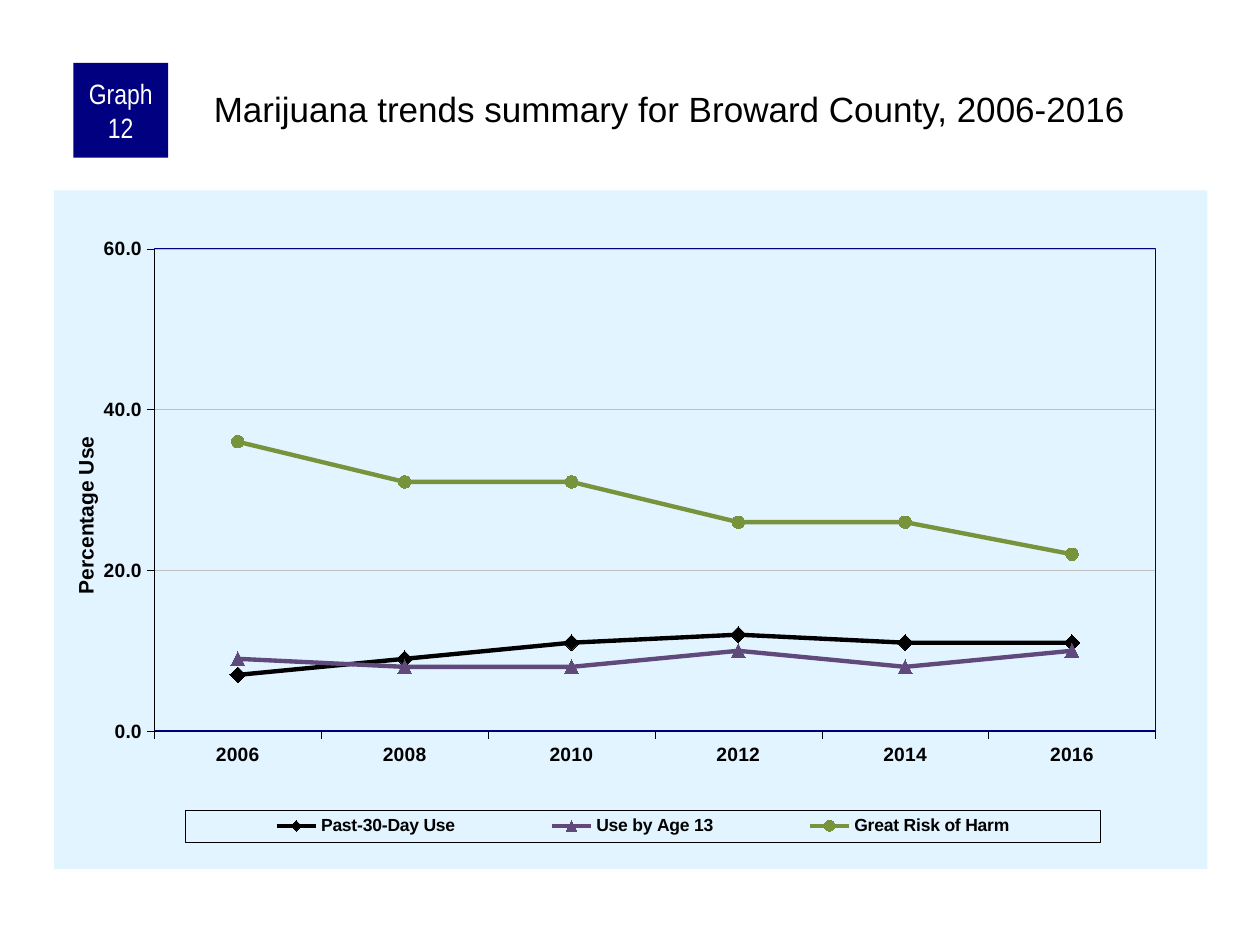
import dataclasses

import pptx
import pptx.chart.data
import pptx.dml.color
import pptx.enum.chart
import pptx.enum.shapes
import pptx.enum.text
import pptx.oxml
import pptx.oxml.ns
import pptx.util

Cm, Pt = pptx.util.Cm, pptx.util.Pt
RGB = pptx.dml.color.RGBColor.from_string
Marker = pptx.enum.chart.XL_MARKER_STYLE
PP_ALIGN, ANCHOR = pptx.enum.text.PP_ALIGN, pptx.enum.text.MSO_ANCHOR


@dataclasses.dataclass(frozen=True)
class Theme:
    font: str = "Arial"
    badge_font: str = "Arial Narrow"
    ink: str = "000000"
    white: str = "FFFFFF"
    navy: str = "000080"
    panel: str = "E1F4FF"
    grid: str = "C0C0C0"
    purple: str = "604A7B"
    green: str = "77933C"
    title_size: float = 20
    badge_size: float = 16
    axis_title_size: float = 12
    axis_size: float = 11
    legend_size: float = 10
    hairline: float = 0.25
    border: float = 1
    series_line: float = 2.5


class Deck:
    """Holds the theme and the current slide, and adds elements to it."""

    def __init__(self, prs, theme):
        self.theme = theme
        self.s = prs.slides.add_slide(prs.slide_layouts[5])

    def style(self, font, size, color=None, name=None, bold=False):
        font.name = name or self.theme.font
        font.size = Pt(size)
        font.bold = bold
        font.color.rgb = RGB(color or self.theme.ink)

    def line(self, line, color, width):
        line.color.rgb = RGB(color)
        line.width = Pt(width)

    def frame(self, sp, text, insets, align, anchor):
        tf = sp.text_frame
        tf.text = text
        tf.word_wrap = True
        tf.auto_size = pptx.enum.text.MSO_AUTO_SIZE.NONE
        tf.vertical_anchor = anchor
        tf.margin_left, tf.margin_top, tf.margin_right, tf.margin_bottom = map(Cm, insets)
        p = tf.paragraphs[0]
        p.alignment = align
        return p.runs[0].font

    def title(self, text, x, y, w, h):
        sp = self.s.shapes.title
        sp.left, sp.top, sp.width, sp.height = map(Cm, (x, y, w, h))
        font = self.frame(sp, text, (0.08, 0.08, 0, 0), PP_ALIGN.LEFT, ANCHOR.TOP)
        self.style(font, self.theme.title_size)

    def badge(self, text, x, y, side):
        sp = self.s.shapes.add_shape(
            pptx.enum.shapes.MSO_SHAPE.RECTANGLE, Cm(x), Cm(y), Cm(side), Cm(side))
        sp.shadow.inherit = False
        sp.fill.solid()
        sp.fill.fore_color.rgb = RGB(self.theme.navy)
        sp.line.fill.background()
        font = self.frame(sp, text, (0.13, 0, 0.13, 0), PP_ALIGN.CENTER, ANCHOR.MIDDLE)
        self.style(font, self.theme.badge_size, self.theme.white, self.theme.badge_font)

    def layout(self, parent, index, target=None, **box):
        for old in parent.findall(pptx.oxml.ns.qn("c:layout")):
            parent.remove(old)
        inner = f'<c:layoutTarget val="{target}"/>' if target else ""
        modes = "".join(f'<c:{k}Mode val="edge"/>' for k in "xy")
        sizes = "".join(f'<c:{k} val="{v}"/>' for k, v in box.items())
        parent.insert(index, pptx.oxml.parse_xml(
            f'<c:layout {pptx.oxml.ns.nsdecls("c")}><c:manualLayout>'
            f"{inner}{modes}{sizes}</c:manualLayout></c:layout>"))

    def area(self, fill=None, line=None, width=0):
        def paint(color):
            if not color:
                return "<a:noFill/>"
            return f'<a:solidFill><a:srgbClr val="{color}"/></a:solidFill>'
        return pptx.oxml.parse_xml(
            f'<c:spPr {pptx.oxml.ns.nsdecls("c", "a")}>{paint(fill)}'
            f'<a:ln w="{Pt(width)}">{paint(line)}</a:ln></c:spPr>')

    def axis(self, axis):
        t = self.theme
        axis.major_tick_mark = pptx.enum.chart.XL_TICK_MARK.OUTSIDE
        axis.minor_tick_mark = pptx.enum.chart.XL_TICK_MARK.NONE
        self.style(axis.tick_labels.font, t.axis_size, bold=True)
        self.line(axis.format.line, t.ink, t.hairline)

    def value_axis(self, axis, title, top, step):
        t = self.theme
        self.axis(axis)
        axis.minimum_scale, axis.maximum_scale, axis.major_unit = 0, top, step
        axis.tick_labels.number_format = "0.0"
        axis.tick_labels.number_format_is_linked = False
        axis.has_major_gridlines = True
        self.line(axis.major_gridlines.format.line, t.grid, t.hairline)
        tf = axis.axis_title.text_frame
        tf.text = title
        self.style(tf.paragraphs[0].runs[0].font, t.axis_title_size, bold=True)
        self.layout(axis.axis_title._element, 1, x=0.013, y=0.357)

    def legend(self, chart):
        t = self.theme
        chart.has_legend = True
        legend = chart.legend
        legend.position = pptx.enum.chart.XL_LEGEND_POSITION.RIGHT
        legend.include_in_layout = False
        self.style(legend.font, t.legend_size, bold=True)
        self.layout(legend._element, 1, x=0.114, y=0.913, w=0.793, h=0.047)
        text = legend._element.find(pptx.oxml.ns.qn("c:txPr"))
        text.addprevious(self.area(line=t.ink, width=t.hairline))

    def line_chart(self, cats, series, axis_title, x, y, w, h):
        t = self.theme
        data = pptx.chart.data.CategoryChartData(number_format="0")
        data.categories = cats
        for name, values, *_ in series:
            data.add_series(name, values)
        chart = self.s.shapes.add_chart(
            pptx.enum.chart.XL_CHART_TYPE.LINE_MARKERS,
            Cm(x), Cm(y), Cm(w), Cm(h), data).chart
        chart.has_title = False
        self.style(chart.font, t.axis_size)
        chart.plots[0].vary_by_categories = False
        for ser, (_, _, color, marker, size) in zip(chart.plots[0].series, series):
            ser.smooth = False
            self.line(ser.format.line, color, t.series_line)
            ser.marker.style, ser.marker.size = marker, size
            ser.marker.format.fill.solid()
            ser.marker.format.fill.fore_color.rgb = RGB(color)
            self.line(ser.marker.format.line, color, t.hairline)
        self.axis(chart.category_axis)
        self.value_axis(chart.value_axis, axis_title, 60, 20)
        self.legend(chart)
        root = chart._chartSpace.find(pptx.oxml.ns.qn("c:chart"))
        root.addnext(self.area(fill=t.panel))
        plot = root.find(pptx.oxml.ns.qn("c:plotArea"))
        self.layout(plot, 0, "inner", x=0.087, y=0.086, w=0.868, h=0.711)
        plot.append(self.area(line=t.navy, width=t.border))


def main():
    prs = pptx.Presentation()
    prs.slide_width, prs.slide_height = Cm(25.4), Cm(19.05)
    theme = Theme()
    deck = Deck(prs, theme)
    deck.badge("Graph 12", 1.48, 1.27, 1.91)
    deck.title("Marijuana trends summary for Broward County, 2006-2016", 4.23, 1.69, 20.11, 2.11)
    series = [
        ("Past-30-Day Use", (7, 9, 11, 12, 11, 11), theme.ink, Marker.DIAMOND, 9),
        ("Use by Age 13", (9, 8, 8, 10, 8, 10), theme.purple, Marker.TRIANGLE, 8),
        ("Great Risk of Harm", (36, 31, 31, 26, 26, 22), theme.green, Marker.CIRCLE, 7),
    ]
    years = [str(year) for year in range(2006, 2017, 2)]
    deck.line_chart(years, series, "Percentage Use", 1.09, 3.84, 23.25, 13.68)
    prs.save("out.pptx")


if __name__ == "__main__":
    main()
